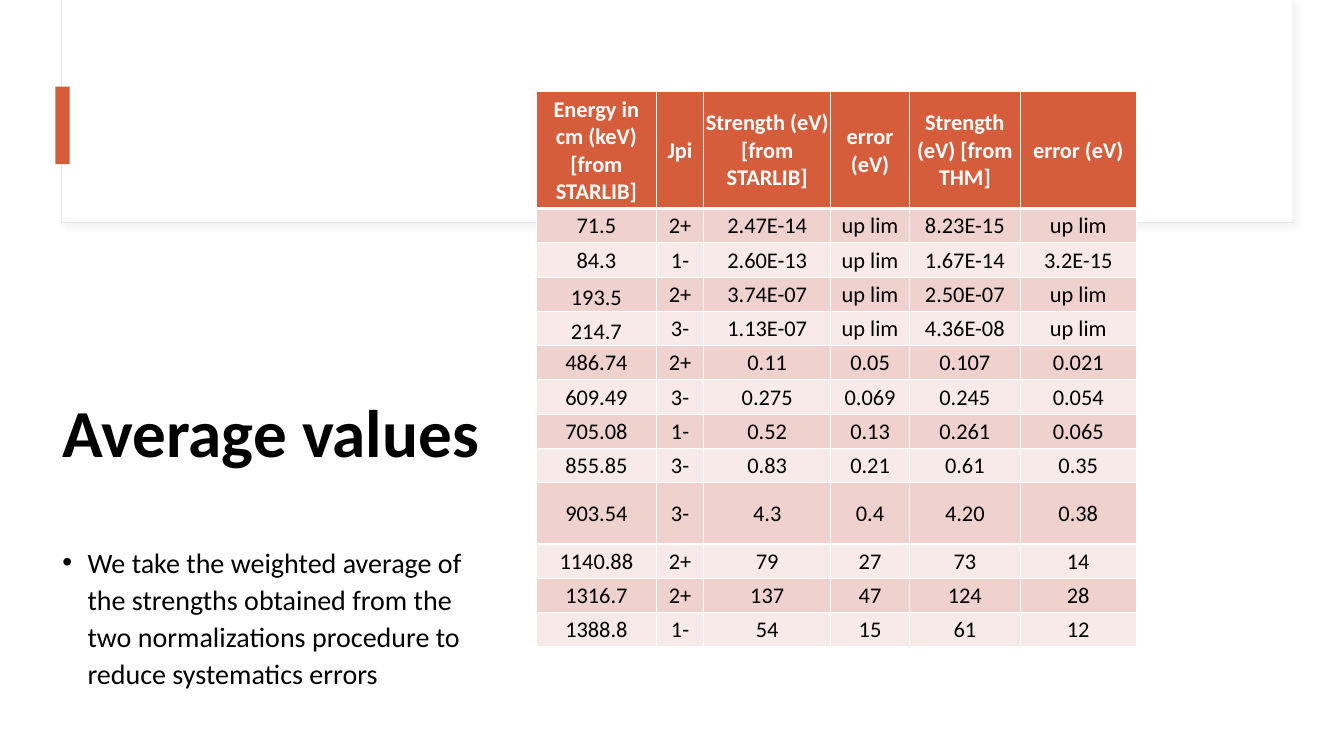
from lxml import etree
from pptx import Presentation
from pptx.dml.color import RGBColor
from pptx.enum.shapes import MSO_SHAPE
from pptx.enum.text import MSO_ANCHOR, PP_ALIGN
from pptx.oxml import parse_xml
from pptx.oxml.ns import nsdecls, qn
from pptx.util import Pt

PX = 9144
FONT = "Calibri"
RECTANGLE = MSO_SHAPE.RECTANGLE
TOP, MIDDLE, BOTTOM = MSO_ANCHOR.TOP, MSO_ANCHOR.MIDDLE, MSO_ANCHOR.BOTTOM
LEFT, CENTER = PP_ALIGN.LEFT, PP_ALIGN.CENTER

WHITE = RGBColor(0xFF, 0xFF, 0xFF)
BLACK = RGBColor(0, 0, 0)
ORANGE = RGBColor(0xD5, 0x5D, 0x3B)
PALE_BLUE = RGBColor(0xE3, 0xE8, 0xEF)
BAND_DARK = RGBColor(0xEF, 0xD2, 0xCE)
BAND_LIGHT = RGBColor(0xF7, 0xEA, 0xE8)
SHADOW_GREY = RGBColor(0xD9, 0xD9, 0xD9)

HEADER_HEIGHT, ROW_HEIGHT, TALL_ROW_HEIGHT = 116, 34, 61
TALL_ROW = "903.54"
LOW_SET_ENERGIES = ("193.5", "214.7")
COLUMN_WIDTHS = (119, 47, 126, 78, 110, 115)
HEADERS = ("Energy in cm (keV) [from STARLIB]", "Jpi", "Strength (eV) [from STARLIB]",
           "error (eV)", "Strength (eV) [from THM]", "error (eV)")
RESONANCES = (
    ("71.5", "2+", "2.47E-14", "up lim", "8.23E-15", "up lim"),
    ("84.3", "1-", "2.60E-13", "up lim", "1.67E-14", "3.2E-15"),
    ("193.5", "2+", "3.74E-07", "up lim", "2.50E-07", "up lim"),
    ("214.7", "3-", "1.13E-07", "up lim", "4.36E-08", "up lim"),
    ("486.74", "2+", "0.11", "0.05", "0.107", "0.021"),
    ("609.49", "3-", "0.275", "0.069", "0.245", "0.054"),
    ("705.08", "1-", "0.52", "0.13", "0.261", "0.065"),
    ("855.85", "3-", "0.83", "0.21", "0.61", "0.35"),
    ("903.54", "3-", "4.3", "0.4", "4.20", "0.38"),
    ("1140.88", "2+", "79", "27", "73", "14"),
    ("1316.7", "2+", "137", "47", "124", "28"),
    ("1388.8", "1-", "54", "15", "61", "12"),
)


def px(*lengths):
    """Turn px lengths into EMU."""
    return [length * PX for length in lengths]


def write_text(frame, text, size=16, color=BLACK, bold=False, align=LEFT,
               line_spacing=None, bullet=None, indent=0):
    """Fill a text frame with one formatted paragraph."""
    paragraph = frame.paragraphs[0]
    if bullet:
        properties = paragraph._p.get_or_add_pPr()
        properties.set("marL", str(indent * PX))
        properties.set("indent", str(-indent * PX))
        etree.SubElement(properties, qn("a:buFont")).set("typeface", "Arial")
        etree.SubElement(properties, qn("a:buChar")).set("char", bullet)
    paragraph.alignment = align
    if line_spacing:
        paragraph.line_spacing = line_spacing
    run = paragraph.add_run()
    run.text = text
    run.font.name = FONT
    run.font.size = Pt(size)
    run.font.bold = bold
    run.font.color.rgb = color


def add_text_box(slide, box, text, anchor=TOP, **text_format):
    """Add a wrapping text box."""
    frame = slide.shapes.add_textbox(*px(*box)).text_frame
    frame.word_wrap = True
    frame.vertical_anchor = anchor
    write_text(frame, text, **text_format)


def add_rectangle(slide, box, fill, line=None):
    """Add a plain rectangle without a shadow."""
    shape = slide.shapes.add_shape(RECTANGLE, *px(*box))
    shape.shadow.inherit = False
    shape.fill.solid()
    shape.fill.fore_color.rgb = fill
    if line is None:
        shape.line.fill.background()
    else:
        shape.line.color.rgb = line
        shape.line.width = Pt(0.75)
    return shape


def add_soft_shadow(shape):
    """Give a shape a faint shadow to the lower right."""
    effects = shape._element.spPr.find(qn("a:effectLst"))
    effects.append(parse_xml(
        f'<a:outerShdw {nsdecls("a")} blurRad="{Pt(4)}" dist="{Pt(3)}" dir="2700000">'
        f'<a:srgbClr val="{SHADOW_GREY}"><a:alpha val="30000"/></a:srgbClr></a:outerShdw>'))


def set_borders(cell, top, bottom):
    """Draw white cell borders, one point wide at the sides."""
    properties = cell._tc.get_or_add_tcPr()
    for index, (side, width) in enumerate((("L", 1), ("R", 1), ("T", top), ("B", bottom))):
        properties.insert(index, parse_xml(
            f'<a:ln{side} {nsdecls("a")} w="{Pt(width)}"><a:solidFill>'
            f'<a:srgbClr val="{WHITE}"/></a:solidFill></a:ln{side}>'))


def fill_cell(cell, text, fill, anchor=MIDDLE, top=1, bottom=1, **text_format):
    """Set the text, fill, margins and borders of a cell."""
    cell.margin_left = cell.margin_top = cell.margin_right = PX
    cell.margin_bottom = 0
    cell.vertical_anchor = anchor
    cell.fill.solid()
    cell.fill.fore_color.rgb = fill
    set_borders(cell, top, bottom)
    write_text(cell.text_frame, text, align=CENTER, **text_format)


def add_resonance_table(slide, left, top):
    """Add the table of resonance strengths."""
    heights = [HEADER_HEIGHT] + [TALL_ROW_HEIGHT if values[0] == TALL_ROW else ROW_HEIGHT
                                 for values in RESONANCES]
    table = slide.shapes.add_table(
        len(heights), len(HEADERS),
        *px(left, top, sum(COLUMN_WIDTHS), sum(heights))).table
    table.first_row = table.horz_banding = False
    for column, width in zip(table.columns, COLUMN_WIDTHS):
        column.width = width * PX
    for row, height in zip(table.rows, heights):
        row.height = height * PX
    for column, header in enumerate(HEADERS):
        fill_cell(table.cell(0, column), header, ORANGE, bottom=3, color=WHITE, bold=True)
    for row, values in enumerate(RESONANCES, 1):
        for column, value in enumerate(values):
            fill_cell(table.cell(row, column), value,
                      BAND_DARK if row % 2 else BAND_LIGHT,
                      anchor=BOTTOM if value in LOW_SET_ENERGIES else MIDDLE,
                      top=3 if row == 1 else 1)


def main():
    """Build the slide and save it."""
    presentation = Presentation()
    presentation.slide_width, presentation.slide_height = px(1333, 750)
    slide = presentation.slides.add_slide(presentation.slide_layouts[6])
    add_soft_shadow(add_rectangle(slide, (61, 0, 1221, 221), WHITE, line=PALE_BLUE))
    add_rectangle(slide, (62, 0, 1220, 220), WHITE)
    add_rectangle(slide, (55, 86, 14, 77), ORANGE)
    add_text_box(slide, (52, 123, 440, 350), "Average values", anchor=BOTTOM,
                 size=48, bold=True, line_spacing=0.9)
    add_text_box(slide, (52, 533, 430, 195),
                 "We take the weighted average of the strengths obtained from the two "
                 "normalizations procedure to reduce systematics errors",
                 size=20, line_spacing=1.1, bullet="•", indent=25)
    add_resonance_table(slide, 532, 91)
    presentation.save("out.pptx")


if __name__ == "__main__":
    main()
